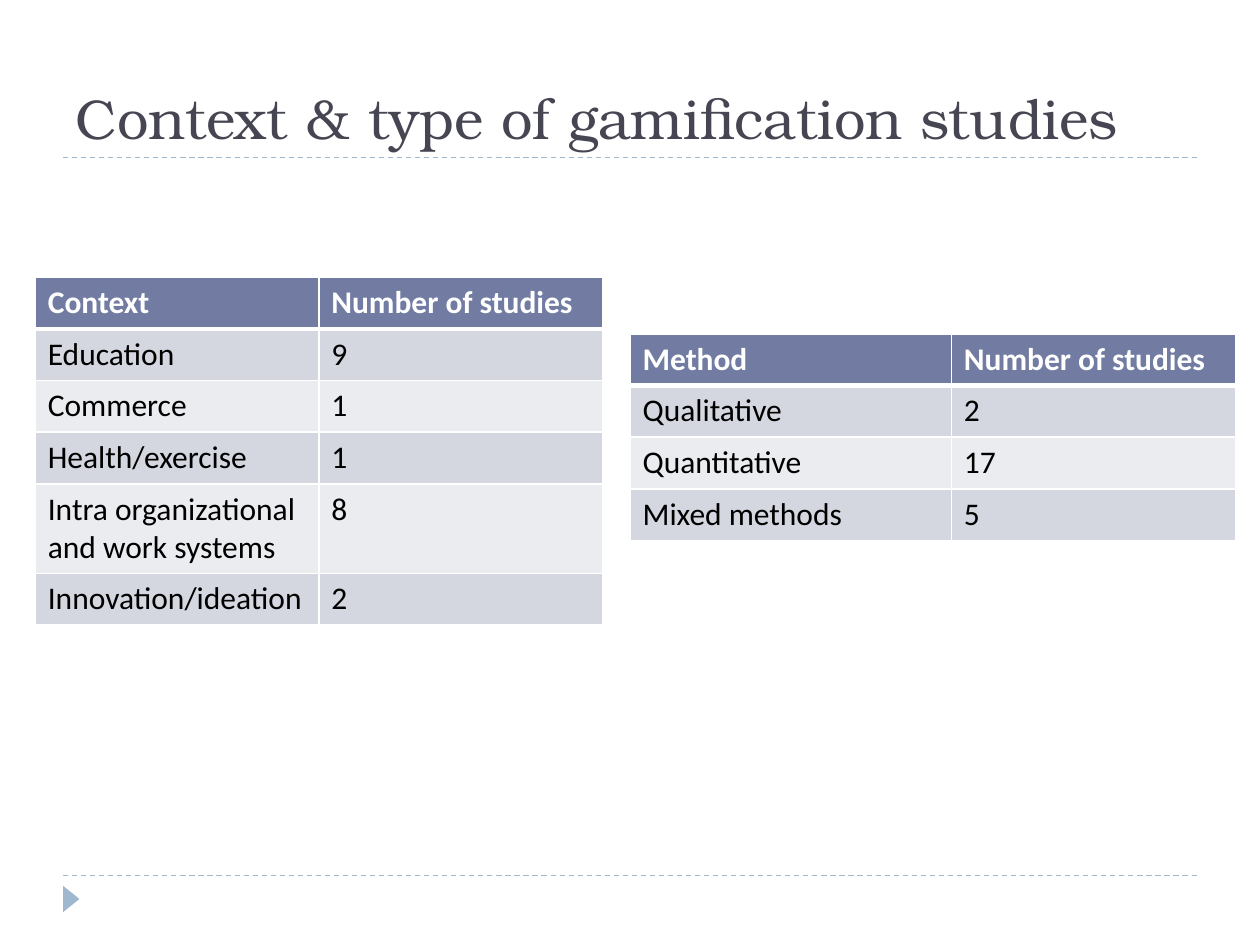
from dataclasses import dataclass

from lxml import etree
from pptx import Presentation
from pptx.dml.color import RGBColor
from pptx.enum import dml, shapes, text
from pptx.oxml import ns
from pptx.util import Inches, Pt


@dataclass(frozen=True)
class Theme:
    title_font: str = "TeX Gyre Bonum"
    body_font: str = "Calibri"
    title_size: int = 32
    body_size: int = 18
    title: str = "464653"
    accent: str = "9FB8CD"
    header: str = "727CA3"
    bands: tuple = ("D5D7E0", "EBECF0")
    white: str = "FFFFFF"
    black: str = "000000"


THEME = Theme()

CONTEXTS = [
    ("Context", "Number of studies"),
    ("Education", "9"),
    ("Commerce", "1"),
    ("Health/exercise", "1"),
    ("Intra organizational and work systems", "8"),
    ("Innovation/ideation", "2"),
]
METHODS = [
    ("Method", "Number of studies"),
    ("Qualitative", "2"),
    ("Quantitative", "17"),
    ("Mixed methods", "5"),
]


def rgb(value):
    return RGBColor.from_string(value)


def style_font(p, name, size, color, bold=False):
    p.font.name = name
    p.font.size = Pt(size)
    p.font.color.rgb = rgb(color)
    p.font.bold = bold


def add_rule(s, y):
    line = s.shapes.add_connector(
        shapes.MSO_CONNECTOR.STRAIGHT, Inches(0.5), Inches(y), Inches(9.5), Inches(y))
    line.line.color.rgb = rgb(THEME.accent)
    line.line.width = Pt(0.75)
    line.line.dash_style = dml.MSO_LINE.DASH
    etree.SubElement(line._element.spPr, ns.qn("a:effectLst"))


def add_marker(s):
    sp = s.shapes.add_shape(
        shapes.MSO_SHAPE.ISOSCELES_TRIANGLE,
        Inches(0.46), Inches(7.07), Inches(0.21), Inches(0.13))
    sp.rotation = 90
    sp.shadow.inherit = False
    sp.fill.solid()
    sp.fill.fore_color.rgb = rgb(THEME.accent)
    sp.line.fill.background()


def set_title(s, title):
    sp = s.shapes.title
    sp.left, sp.top, sp.width, sp.height = map(Inches, (0.5, 0.17, 9, 1.08))
    tf = sp.text_frame
    tf.text = title
    tf.word_wrap = True
    tf.auto_size = text.MSO_AUTO_SIZE.NONE
    tf.vertical_anchor = text.MSO_ANCHOR.BOTTOM
    p = tf.paragraphs[0]
    p.alignment = text.PP_ALIGN.LEFT
    style_font(p, THEME.title_font, THEME.title_size, THEME.title)


def set_borders(cell, top, bottom):
    # Borders must come before the fill in the cell properties
    tcPr = cell._tc.get_or_add_tcPr()
    widths = {"lnL": 1, "lnR": 1, "lnT": top, "lnB": bottom}
    for i, (side, width) in enumerate(widths.items()):
        ln = etree.Element(ns.qn(f"a:{side}"), w=str(Pt(width)))
        fill = etree.SubElement(ln, ns.qn("a:solidFill"))
        etree.SubElement(fill, ns.qn("a:srgbClr"), val=THEME.white)
        tcPr.insert(i, ln)


def add_study_table(s, rows, left, top, col_widths, row_height=0.41):
    table = s.shapes.add_table(
        len(rows), len(col_widths), Inches(left), Inches(top),
        Inches(sum(col_widths)), Inches(row_height * len(rows))).table
    for column, width in zip(table.columns, col_widths):
        column.width = Inches(width)
    for i, values in enumerate(rows):
        header = i == 0
        fill = THEME.header if header else THEME.bands[(i - 1) % 2]
        color = THEME.white if header else THEME.black
        for j, value in enumerate(values):
            cell = table.cell(i, j)
            cell.text = value
            cell.fill.solid()
            cell.fill.fore_color.rgb = rgb(fill)
            style_font(cell.text_frame.paragraphs[0], THEME.body_font,
                       THEME.body_size, color, header)
            # The heavy rule is shared by the header and the first body row
            set_borders(cell, 3 if i == 1 else 1, 3 if header else 1)


def main():
    prs = Presentation()
    prs.slide_width, prs.slide_height = Inches(10), Inches(7.5)
    s = prs.slides.add_slide(prs.slide_layouts[5])

    # Frame: dashed rules and corner marker
    for y in (6.95, 1.25):
        add_rule(s, y)
    add_marker(s)

    # Content
    set_title(s, "Context & type of gamification studies")
    add_study_table(s, CONTEXTS, 0.28, 2.2, (2.25, 2.25))
    add_study_table(s, METHODS, 5, 2.65, (2.55, 2.26))

    prs.save("out.pptx")


if __name__ == "__main__":
    main()
